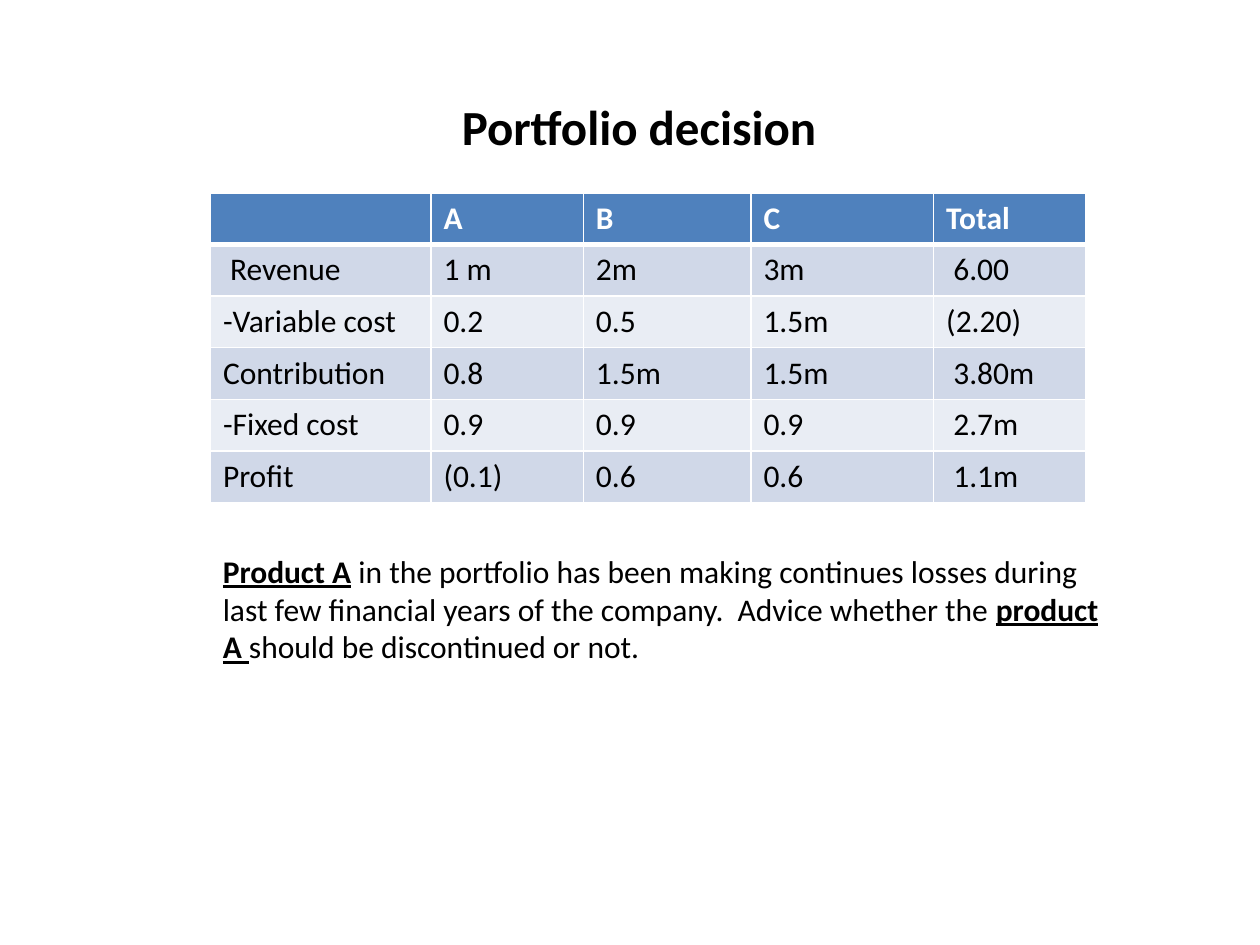
import pptx
import pptx.dml.color
import pptx.enum.text
import pptx.oxml.ns
import pptx.util
from lxml import etree
from pptx.dml.color import RGBColor
from pptx.util import Inches

# Content
TITLE = "Portfolio decision "
ROWS = [
    ("", "A", "B", "C", "Total"),
    (" Revenue", "1 m", "2m", "3m", " 6.00"),
    ("-Variable cost", "0.2", "0.5", "1.5m", "(2.20)"),
    ("Contribution", "0.8", "1.5m", "1.5m", " 3.80m"),
    ("-Fixed cost", "0.9", "0.9", "0.9", " 2.7m"),
    ("Profit", "(0.1)", "0.6", "0.6", " 1.1m"),
]
# Question text, each part with its emphasis
QUESTION = [
    ("Product A", True),
    (" in the portfolio has been making continues losses during last few "
     "financial years of the company.  Advice whether the ", False),
    ("product A ", True),
    ("should be discontinued or not.", False),
]

# Style and layout
FONT = "Calibri"
BLACK = RGBColor(0x00, 0x00, 0x00)
WHITE = RGBColor(0xFF, 0xFF, 0xFF)
HEADER_BLUE = RGBColor(0x4F, 0x81, 0xBD)
BANDS = (RGBColor(0xE9, 0xED, 0xF4), RGBColor(0xD0, 0xD8, 0xE8))
COLUMN_WIDTHS = (1.75, 1.21, 1.33, 1.45, 1.21)
ROW_HEIGHT = 0.41
LEFT = 1.67


def format_run(run, size, color, bold, underline=False):
    run.font.name = FONT
    run.font.size = pptx.util.Pt(size)
    run.font.color.rgb = color
    run.font.bold = bold
    run.font.underline = underline


def add_borders(cell, bottom_width):
    properties = cell._tc.get_or_add_tcPr()
    for side, width in (("L", 1), ("R", 1), ("T", 1), ("B", bottom_width)):
        line = etree.SubElement(properties, pptx.oxml.ns.qn(f"a:ln{side}"),
                                w=str(pptx.util.Pt(width)))
        fill = etree.SubElement(line, pptx.oxml.ns.qn("a:solidFill"))
        etree.SubElement(fill, pptx.oxml.ns.qn("a:srgbClr"), val=str(WHITE))


def add_title(slide):
    title = slide.shapes.title
    title.left, title.top = Inches(0.4), Inches(0.42)
    title.width, title.height = Inches(9.43), Inches(1.16)
    title.text_frame.text = TITLE
    title.text_frame.vertical_anchor = pptx.enum.text.MSO_ANCHOR.MIDDLE
    paragraph = title.text_frame.paragraphs[0]
    paragraph.alignment = pptx.enum.text.PP_ALIGN.CENTER
    format_run(paragraph.runs[0], 28, BLACK, True)


def add_cost_table(slide):
    table = slide.shapes.add_table(
        len(ROWS), len(COLUMN_WIDTHS), Inches(LEFT), Inches(1.53),
        Inches(sum(COLUMN_WIDTHS)), Inches(ROW_HEIGHT * len(ROWS))).table
    for column, width in zip(table.columns, COLUMN_WIDTHS):
        column.width = Inches(width)
    for row_index, values in enumerate(ROWS):
        is_header = row_index == 0
        table.rows[row_index].height = Inches(ROW_HEIGHT)
        for column_index, value in enumerate(values):
            cell = table.cell(row_index, column_index)
            add_borders(cell, 3 if is_header else 1)
            cell.fill.solid()
            cell.fill.fore_color.rgb = HEADER_BLUE if is_header else BANDS[row_index % 2]
            cell.text_frame.text = value
            for run in cell.text_frame.paragraphs[0].runs:
                format_run(run, 18, WHITE if is_header else BLACK, is_header)


def add_question(slide):
    box = slide.shapes.add_textbox(Inches(LEFT), Inches(4.33), Inches(7.17), Inches(1.01))
    box.text_frame.word_wrap = True
    box.text_frame.auto_size = pptx.enum.text.MSO_AUTO_SIZE.SHAPE_TO_FIT_TEXT
    paragraph = box.text_frame.paragraphs[0]
    for text, emphasized in QUESTION:
        run = paragraph.add_run()
        run.text = text
        format_run(run, 18, BLACK, emphasized, emphasized)


def main():
    presentation = pptx.Presentation()
    presentation.slide_width, presentation.slide_height = Inches(10), Inches(7.5)
    title_only_layout = presentation.slide_layouts[5]
    slide = presentation.slides.add_slide(title_only_layout)
    add_title(slide)
    add_cost_table(slide)
    add_question(slide)
    presentation.save("out.pptx")


if __name__ == "__main__":
    main()
